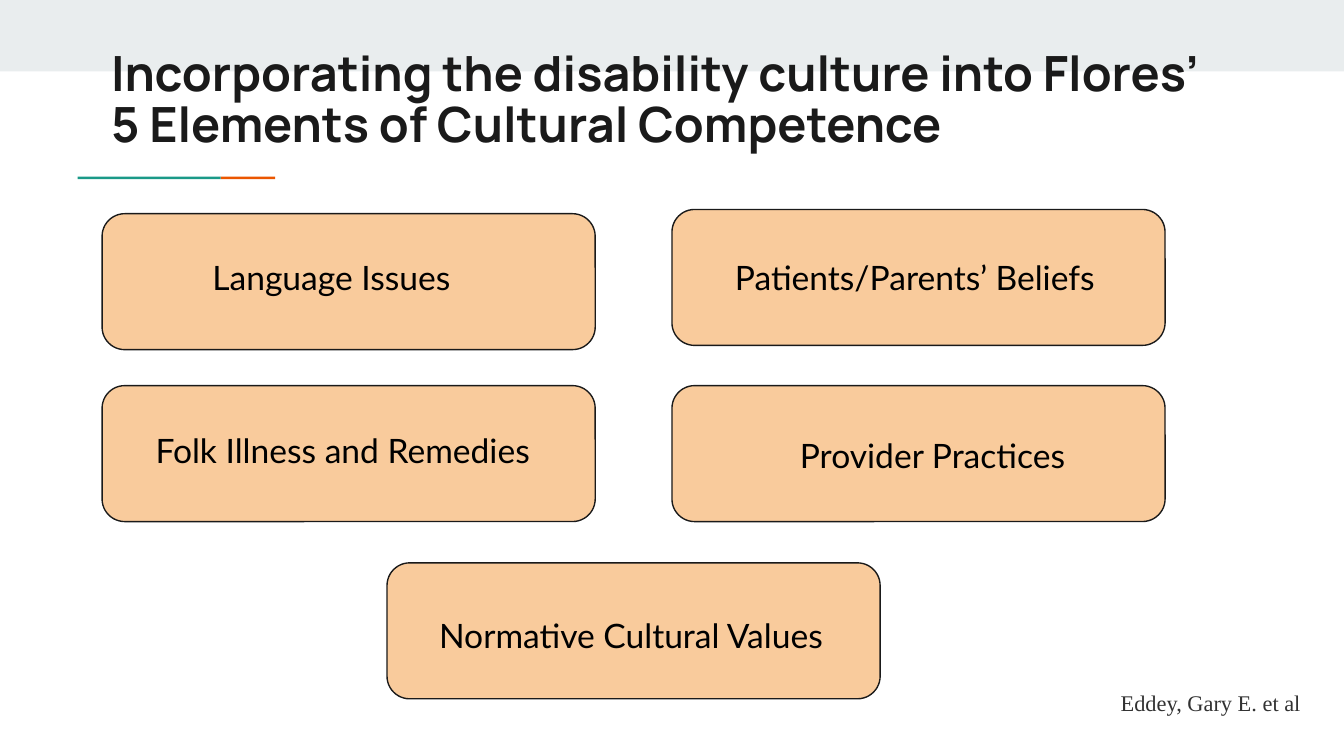
from dataclasses import dataclass

from pptx import Presentation
from pptx import util as u
from pptx.dml import color
from pptx.enum import shapes, text


@dataclass(frozen=True)
class Theme:
    band: str = "E9EDEE"
    teal: str = "1A9988"
    orange: str = "EB5600"
    card: str = "F9CB9C"
    ink: str = "1A1A1A"
    black: str = "000000"
    grey: str = "323232"
    head: str = "Manrope"
    body: str = "Lato"
    serif: str = "Times New Roman"
    big: int = 26
    mid: int = 18
    small: int = 12


class Deck:
    def __init__(self, theme, slide):
        self.theme = theme
        self.slide = slide

    def fill(self, frame, runs, size, font, tint, bold=False, align=None):
        """Write the runs into a text frame."""
        frame.word_wrap = True
        frame.auto_size = text.MSO_AUTO_SIZE.NONE
        frame.vertical_anchor = text.MSO_ANCHOR.TOP
        frame.margin_left = frame.margin_right = u.Cm(0.25)
        frame.margin_top = frame.margin_bottom = u.Cm(0.25)
        para = frame.paragraphs[0]
        para.alignment = align or text.PP_ALIGN.LEFT
        for words in runs:
            run = para.add_run()
            run.text = words
            run.font.size = u.Pt(size)
            run.font.name = font
            run.font.bold = bold
            run.font.color.rgb = color.RGBColor.from_string(tint)
        return para

    def shape(self, kind, box, tint, line=None):
        item = self.slide.shapes.add_shape(kind, *map(u.Cm, box))
        item.shadow.inherit = False
        item.fill.solid()
        item.fill.fore_color.rgb = color.RGBColor.from_string(tint)
        if line:
            item.line.color.rgb = color.RGBColor.from_string(line)
            item.line.width = u.Pt(0.75)
        else:
            item.line.fill.background()
        return item

    def bar(self, box, tint):
        self.shape(shapes.MSO_SHAPE.RECTANGLE, box, tint)

    def card(self, left, top):
        kind = shapes.MSO_SHAPE.ROUNDED_RECTANGLE
        box = (left, top, 9.32, 2.57)
        self.shape(kind, box, self.theme.card, self.theme.ink)

    def title(self, words, box):
        item = self.slide.shapes.title
        item.left, item.top, item.width, item.height = map(u.Cm, box)
        para = self.fill(item.text_frame, [words], self.theme.big,
                         self.theme.head, self.theme.ink, bold=True)
        para.line_spacing = 0.88
        # Bring the title in front of the band
        self.slide.shapes.element.append(item.element)

    def label(self, words, box, size, font, tint, align=None):
        item = self.slide.shapes.add_textbox(*map(u.Cm, box))
        self.fill(item.text_frame, [words], size, font, tint, align=align)


def main():
    show = Presentation()
    show.slide_width, show.slide_height = u.Cm(25.4), u.Cm(14.29)
    theme = Theme()
    deck = Deck(theme, show.slides.add_slide(show.slide_layouts[5]))

    # Top band and accent rule
    deck.bar((0, 0, 25.4, 1.35), theme.band)
    deck.bar((4.17, 3.34, 1.03, 0.05), theme.orange)
    deck.bar((1.47, 3.34, 2.7, 0.05), theme.teal)

    # Title
    deck.title("Incorporating the disability culture into Flores’ "
               "5 Elements of Cultural Competence", (1.85, 0.71, 21.36, 1.5))

    # Cards: two columns, then one centred between them
    left, right = 1.93, 12.7
    spots = [(left, 4.04), (right, 3.96), (left, 7.29), (right, 7.29),
             ((left + right) / 2, 10.64)]
    for spot in spots:
        deck.card(*spot)

    # Card labels
    mid = text.PP_ALIGN.CENTER
    labels = [
        ("Language Issues", (2.72, 4.6, 7.09, 1.7), mid),
        ("Patients/Parents’ Beliefs", (13.64, 4.6, 7.98, 1.7), None),
        ("Folk Illness and Remedies", (2.69, 7.87, 7.8, 1.5), None),
        ("Provider Practices", (14.5, 7.98, 6.25, 1.22), mid),
        ("Normative Cultural Values", (8.05, 11.38, 8.97, 1.09), None),
    ]
    for words, box, align in labels:
        deck.label(words, box, theme.mid, theme.body, theme.black, align)

    # Citation
    deck.label("Eddey, Gary E. et al", (20.93, 12.78, 3.99, 1.22),
               theme.small, theme.serif, theme.grey)

    show.save("out.pptx")


if __name__ == "__main__":
    main()
